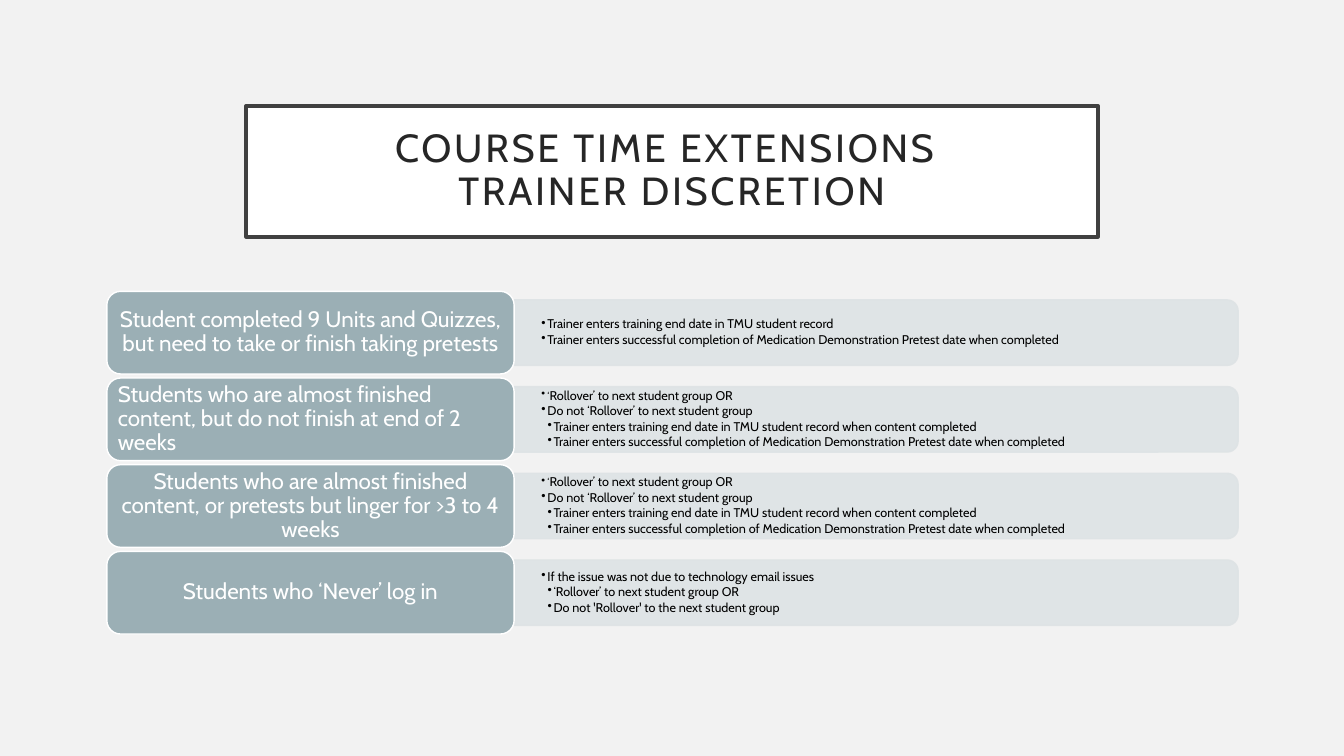
"""Build the slide on course time extensions at trainer discretion."""
from dataclasses import dataclass

from lxml.etree import SubElement
from pptx import Presentation
from pptx.dml.color import RGBColor
from pptx.enum.shapes import MSO_SHAPE
from pptx.enum.text import MSO_ANCHOR, PP_ALIGN
from pptx.oxml.ns import qn
from pptx.shapes.autoshape import Shape
from pptx.slide import Slide
from pptx.text.text import TextFrame
from pptx.util import Inches, Pt

COLORS = {
    "background": "F2F2F2",
    "white": "FFFFFF",
    "border": "404040",
    "title": "262626",
    "label": "9BAFB5",
    "bar": "DEE3E5",
    "action": "000000",
}
FONT = "Cabin"
FIRST_ROW_TOP, ROW_STEP = 2.89, 0.86
LABEL_LEFT, LABEL_WIDTH, LABEL_HEIGHT = 1.06, 4.04, 0.82
BAR_LENGTH, BAR_THICKNESS = 7.18, 0.65
ACTIONS_WIDTH, ACTIONS_HEIGHT = 7.15, 0.59
INDENT = 0.06


@dataclass(frozen=True)
class Action:
    text: str
    level: int = 1
    small_quote: bool = False


@dataclass(frozen=True)
class Situation:
    label: str
    actions: tuple[Action, ...]
    align: PP_ALIGN = PP_ALIGN.CENTER


PRETEST = "Trainer enters successful completion of Medication Demonstration Pretest date when completed"
ROLLOVER_CHOICE = (
    Action("‘Rollover’ to next student group OR", small_quote=True),
    Action("Do not ‘Rollover’ to next student group"),
    Action("Trainer enters training end date in TMU student record when content completed", 2),
    Action(PRETEST, 2),
)
SITUATIONS = (
    Situation(
        "Student completed 9 Units and Quizzes, but need to take or finish taking pretests",
        (Action("Trainer enters training end date in TMU student record"), Action(PRETEST)),
    ),
    Situation(
        "Students who are almost finished content, but do not finish at end of 2 weeks",
        ROLLOVER_CHOICE,
        PP_ALIGN.LEFT,
    ),
    Situation(
        "Students who are almost finished content, or pretests but linger for >3 to 4 weeks",
        ROLLOVER_CHOICE,
    ),
    Situation(
        "Students who ‘Never’ log in",
        (
            Action("If the issue was not due to technology email issues"),
            Action("‘Rollover’ to next student group OR", 2),
            Action("Do not 'Rollover' to the next student group", 2),
        ),
    ),
)


def color(name: str) -> RGBColor:
    return RGBColor.from_string(COLORS[name])


def add_panel(slide: Slide, kind: MSO_SHAPE, left: float, top: float, width: float,
              height: float, fill: str, line: str, line_width: float) -> Shape:
    panel = slide.shapes.add_shape(kind, Inches(left), Inches(top), Inches(width), Inches(height))
    panel.shadow.inherit = False
    panel.fill.solid()
    panel.fill.fore_color.rgb = color(fill)
    panel.line.color.rgb = color(line)
    panel.line.width = Pt(line_width)
    return panel


def set_frame(frame: TextFrame, side: float, end: float) -> None:
    frame.word_wrap = True
    frame.vertical_anchor = MSO_ANCHOR.MIDDLE
    frame.margin_left = frame.margin_right = Inches(side)
    frame.margin_top = frame.margin_bottom = Inches(end)


def write_centre(panel: Shape, text: str, size: float, ink: str, align: PP_ALIGN) -> None:
    paragraph = panel.text_frame.paragraphs[0]
    paragraph.text = text
    paragraph.alignment = align
    paragraph.line_spacing = 0.9
    paragraph.font.size = Pt(size)
    paragraph.font.name = FONT
    paragraph.font.color.rgb = color(ink)


def add_title(slide: Slide) -> None:
    title = add_panel(slide, MSO_SHAPE.RECTANGLE, 2.44, 1.05, 8.45, 1.3, "white", "border", 2.5)
    set_frame(title.text_frame, 0.2, 0.2)
    write_centre(title, "COURSE TIME EXTENSIONS \vTRAINER DISCRETION", 28, "title", PP_ALIGN.CENTER)
    for run in title.text_frame.paragraphs[0].runs:
        run.font._element.set("spc", "200")


def add_bar(slide: Slide, middle: float) -> None:
    centre = LABEL_LEFT + LABEL_WIDTH + BAR_LENGTH / 2
    bar = add_panel(slide, MSO_SHAPE.ROUND_2_SAME_RECTANGLE, centre - BAR_THICKNESS / 2,
                    middle - BAR_LENGTH / 2, BAR_THICKNESS, BAR_LENGTH, "bar", "bar", 1)
    bar.rotation = 90
    for tint in bar._element.spPr.iter(qn("a:srgbClr")):
        SubElement(tint, qn("a:alpha"), val="90000")


def write_action(frame: TextFrame, position: int, action: Action) -> None:
    paragraph = frame.add_paragraph() if position else frame.paragraphs[0]
    paragraph.level = action.level
    paragraph.alignment = PP_ALIGN.LEFT
    paragraph.line_spacing = 0.9
    paragraph.space_after = Pt(1.35)
    properties = paragraph._p.get_or_add_pPr()
    properties.set("marL", str(Inches(INDENT * action.level)))
    properties.set("indent", str(-Inches(INDENT)))
    SubElement(properties, qn("a:buChar"), char="•")
    paragraph.font.name = FONT
    paragraph.font.color.rgb = color("action")
    if action.small_quote:
        for text, size in ((action.text[:1], 8), (action.text[1:], 9)):
            run = paragraph.add_run()
            run.text = text
            run.font.size = Pt(size)
    else:
        paragraph.add_run().text = action.text
        paragraph.font.size = Pt(9)


def add_actions(slide: Slide, middle: float, actions: tuple[Action, ...]) -> None:
    box = slide.shapes.add_textbox(Inches(LABEL_LEFT + LABEL_WIDTH), Inches(middle - ACTIONS_HEIGHT / 2),
                                   Inches(ACTIONS_WIDTH), Inches(ACTIONS_HEIGHT))
    set_frame(box.text_frame, 0.27, 0.14)
    for position, action in enumerate(actions):
        write_action(box.text_frame, position, action)


def add_situation(slide: Slide, row: int, situation: Situation) -> None:
    top = FIRST_ROW_TOP + row * ROW_STEP
    middle = top + LABEL_HEIGHT / 2
    add_bar(slide, middle)
    add_actions(slide, middle, situation.actions)
    label = add_panel(slide, MSO_SHAPE.ROUNDED_RECTANGLE, LABEL_LEFT, top,
                      LABEL_WIDTH, LABEL_HEIGHT, "label", "white", 1)
    set_frame(label.text_frame, 0.07, 0.03)
    write_centre(label, situation.label, 16, "white", situation.align)


def main() -> None:
    presentation = Presentation()
    presentation.slide_width = Inches(13.33)
    presentation.slide_height = Inches(7.5)
    slide = presentation.slides.add_slide(presentation.slide_layouts[6])
    slide.background.fill.solid()
    slide.background.fill.fore_color.rgb = color("background")
    add_title(slide)
    for row, situation in enumerate(SITUATIONS):
        add_situation(slide, row, situation)
    presentation.save("out.pptx")


if __name__ == "__main__":
    main()
